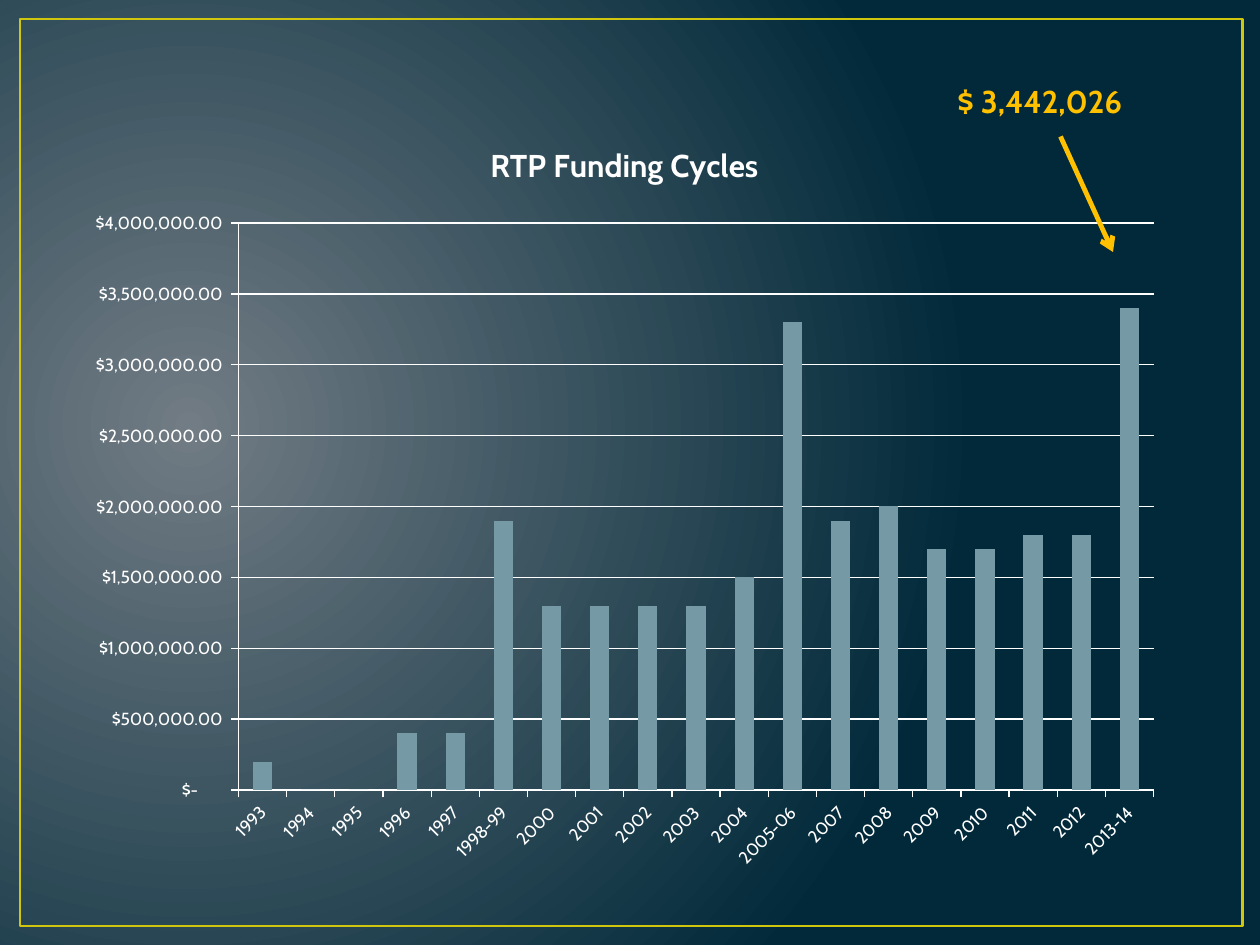
from dataclasses import dataclass

from lxml.etree import SubElement
from pptx import Presentation
from pptx.chart.data import CategoryChartData
from pptx.dml.color import RGBColor
from pptx.enum.chart import XL_CHART_TYPE as CT, XL_TICK_MARK as TICK
from pptx.enum.shapes import MSO_CONNECTOR as CONN, MSO_SHAPE as SHAPE
from pptx.enum.text import MSO_AUTO_SIZE as AUTO
from pptx.oxml.ns import qn
from pptx.util import Pt


@dataclass(frozen=True)
class Theme:
    font: str = "Cabin"
    glow: str = "717C84"
    navy: str = "01293A"
    frame: str = "CFC60D"
    bar: str = "759AA5"
    text: str = "FFFFFF"
    accent: str = "FFC000"
    title_size: int = 18
    axis_size: int = 10


THEME = Theme()
CURRENCY = r'_("$"* #,##0.00_);_("$"* \(#,##0.00\);_("$"* "-"??_);_(@_)'
FUNDING = {
    "1993": 200000, "1994": 0, "1995": 0, "1996": 400000, "1997": 400000,
    "1998-99": 1900000, "2000": 1300000, "2001": 1300000, "2002": 1300000,
    "2003": 1300000, "2004": 1500000, "2005-06": 3300000, "2007": 1900000,
    "2008": 2000000, "2009": 1700000, "2010": 1700000, "2011": 1800000,
    "2012": 1800000, "2013-14": 3400000,
}


def rgb(color):
    return RGBColor.from_string(color)


def style_font(font, size, color, bold=False):
    font.name, font.size, font.bold = THEME.font, Pt(size), bold
    font.color.rgb = rgb(color)


def style_line(line, color, width):
    line.color.rgb = rgb(color)
    line.width = Pt(width)


def set_background(s):
    """Fill the slide with a circular gradient centred left of the middle."""
    fill = s.background.fill
    fill.gradient()
    for stop, color in zip(fill.gradient_stops, (THEME.glow, THEME.navy)):
        stop.color.rgb = rgb(color)
    grad = s.background._cSld.find(".//" + qn("a:gradFill"))
    grad.remove(grad.find(qn("a:lin")))
    circle = SubElement(grad, qn("a:path"), {"path": "circle"})
    SubElement(circle, qn("a:fillToRect"),
               {"l": "15000", "t": "50000", "r": "85000", "b": "60000"})


def add_frame(s, x, y, w, h):
    sp = s.shapes.add_shape(SHAPE.RECTANGLE, Pt(x), Pt(y), Pt(w), Pt(h))
    sp.shadow.inherit = False
    sp.fill.background()
    style_line(sp.line, THEME.frame, 1.5)


def set_plot_area(chart, x, y, w, h):
    """Place the inner plot area, in fractions of the chart."""
    plot_area = chart._chartSpace.chart.plotArea
    layout = plot_area.find(qn("c:layout"))
    if layout is None:
        layout = plot_area.makeelement(qn("c:layout"))
        plot_area.insert(0, layout)
    manual = SubElement(layout, qn("c:manualLayout"))
    settings = {"layoutTarget": "inner", "xMode": "edge", "yMode": "edge",
                "x": x, "y": y, "w": w, "h": h}
    for name, value in settings.items():
        SubElement(manual, qn(f"c:{name}"), {"val": str(value)})


def add_funding_chart(s, x, y, w, h):
    data = CategoryChartData()
    data.categories = list(FUNDING)
    data.add_series("Series 1", list(FUNDING.values()))
    chart = s.shapes.add_chart(CT.COLUMN_CLUSTERED, Pt(x), Pt(y), Pt(w), Pt(h), data).chart
    style_font(chart.font, THEME.axis_size, THEME.text)
    chart.has_legend = False
    chart.has_title = True
    p = chart.chart_title.text_frame.paragraphs[0]
    p.text = "RTP Funding Cycles"
    style_font(p.font, THEME.title_size, THEME.text, bold=True)
    chart.chart_title.include_in_layout = False

    plot = chart.plots[0]
    plot.gap_width = 150
    plot.vary_by_categories = False
    fill = plot.series[0].format.fill
    fill.solid()
    fill.fore_color.rgb = rgb(THEME.bar)

    values, years = chart.value_axis, chart.category_axis
    for axis in (values, years):
        axis.major_tick_mark = TICK.OUTSIDE
        axis.minor_tick_mark = TICK.NONE
        style_line(axis.format.line, THEME.text, 0.75)
    values.minimum_scale, values.maximum_scale, values.major_unit = 0, 4000000, 500000
    values.has_major_gridlines = True
    style_line(values.major_gridlines.format.line, THEME.text, 0.75)
    values.tick_labels.number_format = CURRENCY
    values.tick_labels.number_format_is_linked = False
    style_font(years.tick_labels.font, THEME.axis_size, THEME.text)
    years._element.find(qn("c:txPr")).find(qn("a:bodyPr")).set("rot", "-2700000")
    set_plot_area(chart, 0.15, 0.14, 0.83, 0.74)


def add_arrow(s, x1, y1, x2, y2):
    line = s.shapes.add_connector(CONN.STRAIGHT, Pt(x1), Pt(y1), Pt(x2), Pt(y2))
    style_line(line.line, THEME.accent, 2.75)
    SubElement(line.line._get_or_add_ln(), qn("a:tailEnd"), {"type": "arrow"})
    SubElement(line._element.spPr, qn("a:effectLst"))


def add_callout(s, text, x, y, w, h):
    tf = s.shapes.add_textbox(Pt(x), Pt(y), Pt(w), Pt(h)).text_frame
    tf.word_wrap = True
    tf.auto_size = AUTO.SHAPE_TO_FIT_TEXT
    p = tf.paragraphs[0]
    p.text = text
    style_font(p.font, THEME.title_size, THEME.accent, bold=True)


def main():
    prs = Presentation()
    prs.slide_width, prs.slide_height = Pt(720), Pt(540)
    s = prs.slides.add_slide(prs.slide_layouts[6])
    set_background(s)
    add_frame(s, 11.5, 10.8, 698.4, 518.4)
    add_funding_chart(s, 41.8, 66.2, 630, 437.8)
    add_arrow(s, 606, 78, 636, 144)
    add_callout(s, "$ 3,442,026", 540, 43.2, 192, 28.8)
    prs.save("out.pptx")


if __name__ == "__main__":
    main()
